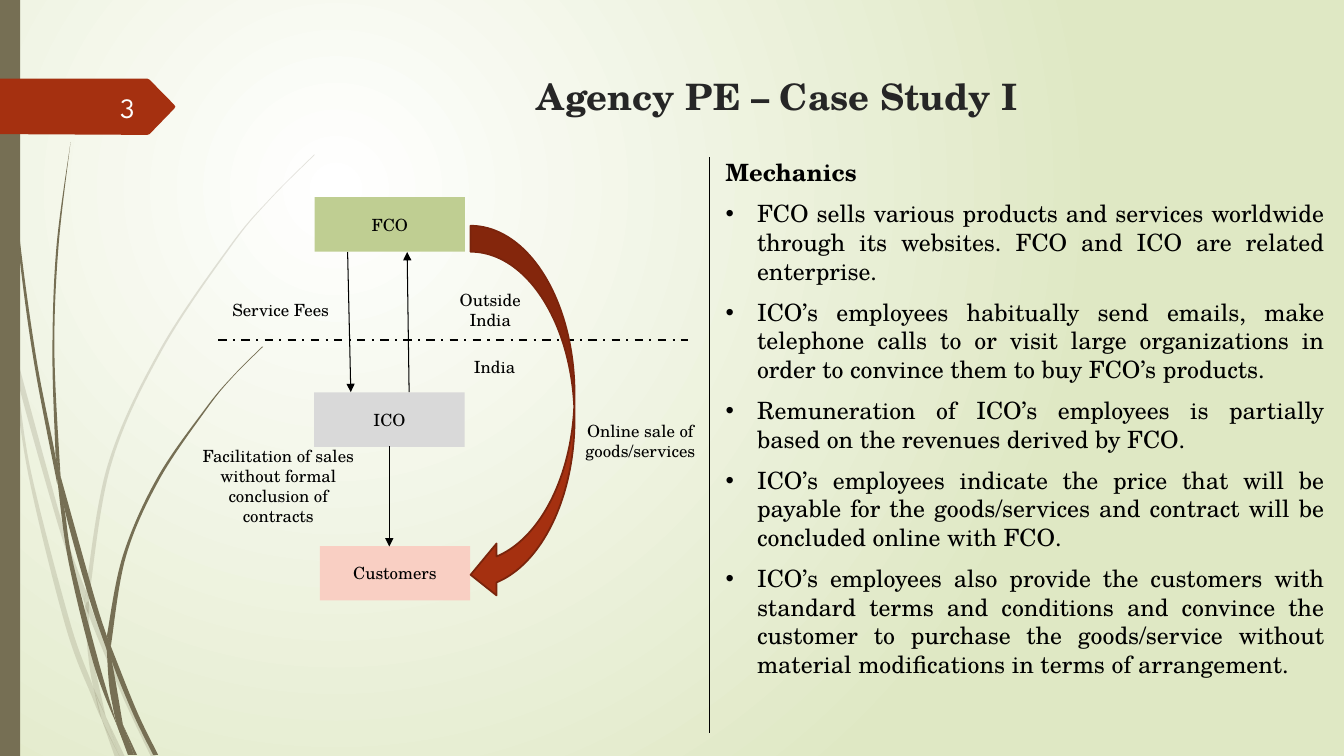
from typing import NamedTuple

from lxml.etree import SubElement
from pptx import Presentation
from pptx.dml.color import RGBColor
from pptx.enum.dml import MSO_LINE_DASH_STYLE as DASH
from pptx.enum.shapes import MSO_CONNECTOR, MSO_SHAPE as SHAPE
from pptx.enum.text import MSO_ANCHOR as ANCHOR, PP_ALIGN as ALIGN
from pptx.oxml.ns import qn
from pptx.util import Cm, Pt

SERIF, SANS = "TeX Gyre Schola", "League Spartan"
BLACK, OLIVE, RUST = "000000", "766F54", "A53010"
CM_PER_INCH = 2.54

Node = NamedTuple("Node", [("text", str), ("x", float), ("y", float), ("fill", str)])
Box = NamedTuple("Box", [("x", float), ("y", float), ("w", float), ("h", float)])


class Label(NamedTuple):
    text: str
    box: Box
    size: float = 12
    font: str = SERIF
    color: str = BLACK
    bold: bool = False
    align: ALIGN = ALIGN.CENTER
    anchor: ANCHOR = ANCHOR.MIDDLE


class Line(NamedTuple):
    start: tuple[float, float]
    end: tuple[float, float]
    arrow: bool = False
    width: float = 0.75
    dash: DASH | None = None


# Each blade of grass is its left and right edge, top to bottom, in inches.
PALE_BLADES = [
    ([(0, 2.99), (0.1, 3.44), (0.11, 3.5)], [(0, 2.82), (0.09, 3.22), (0.11, 3.5)]),
    ([(0.14, 3.45), (0.17, 3.76), (0.58, 5.22), (0.84, 5.99)],
     [(0.14, 3.45), (0.62, 5.2), (0.85, 5.86)]),
    ([(0.88, 5.96), (0.88, 6.1), (1.23, 6.94), (1.5, 7.51)],
     [(0.88, 5.96), (0.92, 6.07), (1.27, 6.92), (1.55, 7.51)]),
    ([(1.05, 7.11), (1.19, 7.51)], [(1.05, 7.11), (1.24, 7.51)]),
    ([(0.11, 3.5), (0.28, 4.7), (0.65, 6.21), (0.92, 6.93), (1.01, 7.14)],
     [(0.11, 3.5), (0.17, 3.76), (0.31, 4.69), (0.7, 6.19), (0.93, 6.83), (1.01, 7.14)]),
    ([(0.84, 5.99), (0.87, 6.46), (0.93, 6.83), (1.05, 7.11)],
     [(0.84, 5.99), (0.88, 6.1), (0.91, 6.46), (1.05, 7.11)]),
    ([(3.12, 1.53), (2.68, 1.97), (2.28, 2.44), (1.58, 3.48), (1.07, 4.61), (0.85, 5.86)],
     [(3.12, 1.54), (2.68, 1.98), (2.29, 2.45), (1.6, 3.49), (1.1, 4.62), (0.88, 5.96)]),
    ([(1.01, 7.14), (1.14, 7.51)], [(1.01, 7.14), (1.19, 7.51)]),
    ([(0.85, 5.86), (0.84, 5.99), (0.88, 6.1)], [(0.85, 5.86), (0.88, 5.96), (0.88, 6.1)]),
    ([(0.93, 6.83), (1.01, 7.14), (1.19, 7.51)], [(0.93, 6.83), (1.05, 7.11), (1.19, 7.51)]),
]
DARK_BLADES = [
    ([(0.03, 0), (0.07, 1.1), (0.17, 2.33), (0.33, 3.55), (0.57, 4.81)],
     [(0.04, 0), (0.08, 1.09), (0.19, 2.32), (0.36, 3.55), (0.55, 4.53), (0.57, 4.81)]),
    ([(0.6, 4.72), (0.64, 5.05), (0.88, 5.92), (1.06, 6.45)],
     [(0.6, 4.72), (0.93, 5.9), (1.06, 6.31)]),
    ([(1.1, 6.41), (1.11, 6.56), (1.32, 7.08), (1.52, 7.49)],
     [(1.1, 6.41), (1.36, 7.06), (1.57, 7.49)]),
    ([(0.57, 4.77), (0.68, 5.57), (0.93, 6.59), (1.17, 7.22)],
     [(0.57, 4.77), (0.64, 5.05), (0.72, 5.56), (0.98, 6.57), (1.17, 7.22)]),
    ([(0.7, 1.41), (0.56, 2.45), (0.52, 3.49), (0.55, 4.49)],
     [(0.7, 1.41), (0.58, 2.45), (0.54, 3.49), (0.6, 4.72)]),
    ([(1.22, 7.19), (1.33, 7.49)], [(1.22, 7.19), (1.36, 7.49)]),
    ([(0.55, 4.49), (0.57, 4.77), (0.64, 5.05)], [(0.55, 4.49), (0.6, 4.72), (0.64, 5.05)]),
    ([(2.6, 3.44), (2.31, 3.73), (2.04, 4.05), (1.56, 4.74), (1.22, 5.51), (1.06, 6.31)],
     [(2.61, 3.44), (2.31, 3.74), (2.05, 4.06), (1.58, 4.76), (1.25, 5.52), (1.1, 6.41)]),
    ([(1.17, 7.22), (1.27, 7.49)], [(1.17, 7.22), (1.31, 7.49)]),
    ([(1.06, 6.45), (1.1, 6.91), (1.22, 7.19)], [(1.06, 6.45), (1.11, 6.56), (1.22, 7.19)]),
    ([(1.06, 6.31), (1.06, 6.45), (1.11, 6.56)], [(1.06, 6.31), (1.1, 6.41), (1.11, 6.56)]),
    ([(1.1, 6.91), (1.17, 7.22), (1.3, 7.49)], [(1.1, 6.91), (1.22, 7.19), (1.33, 7.49)]),
]
NUMBER_TAG = [(0, 1.98), (3.71, 1.98), (3.77, 2.01), (4.39, 2.64), (4.42, 2.69),
              (4.39, 2.74), (3.77, 3.38), (3.71, 3.4), (0, 3.38)]
NODES = [Node("FCO", 7.93, 4.97, "BFCE92"), Node("ICO", 7.92, 9.89, "D9D9D9"),
         Node("Customers", 8.06, 13.76, "F9CFC3")]
LINES = [
    Line((9.81, 11.25), (9.81, 13.77), arrow=True),
    Line((8.76, 6.35), (8.84, 9.88), arrow=True),
    Line((17.88, 3.96), (17.88, 18.47)),
    Line((5.5, 8.57), (17.34, 8.57), width=1.5, dash=DASH.DASH_DOT),
    Line((10.31, 9.88), (10.26, 6.35), arrow=True),
]
LABELS = [
    Label("Agency PE – Case Study I", Box(7.21, 1.75, 24.77, 3.56), 26,
          color="262626", bold=True, anchor=ANCHOR.TOP),
    Label("India", Box(11.27, 8.71, 2.39, 1.07)),
    Label("Service Fees", Box(5.54, 7.26, 3.07, 1.07)),
    Label("Outside India", Box(11.16, 7.25, 2.39, 1.12)),
    Label("Online sale of goods/services", Box(14.4, 10.57, 3.48, 1.07)),
    Label("Facilitation of sales without formal conclusion of contracts",
          Box(4.68, 11.28, 4.67, 1.93)),
    Label("3", Box(1.48, 2.2, 2.16, 1.02), 20, SANS, "FEFFFF", align=ALIGN.RIGHT),
]
MECHANICS = [
    "FCO sells various products and services worldwide through its websites. "
    "FCO and ICO are related enterprise.",
    "ICO’s employees habitually send emails, make telephone calls to or visit large "
    "organizations in order to convince them to buy FCO’s products.",
    "Remuneration of ICO’s employees is partially based on the revenues derived by FCO.",
    "ICO’s employees indicate the price that will be payable for the goods/services and "
    "contract will be concluded online with FCO.",
    "ICO’s employees also provide the customers with standard terms and conditions and convince "
    "the customer to purchase the goods/service without material modifications in terms of "
    "arrangement.",
]


def rgb(color: str) -> RGBColor:
    return RGBColor.from_string(color)


def paint_background(s) -> None:
    fill = s.background.fill
    fill.gradient()
    for stop, position, color in zip(fill.gradient_stops, (0, 1), ("FFFFFF", "DFE8C4")):
        stop.position, stop.color.rgb = position, rgb(color)
    grad = s.element.find(".//" + qn("a:gradFill"))
    grad.remove(grad.find(qn("a:lin")))
    circle = SubElement(grad, qn("a:path"), path="circle")
    SubElement(circle, qn("a:fillToRect"), l="50000", t="50000", r="100000", b="100000")


def style(sp, fill: str) -> None:
    sp.shadow.inherit = False
    sp.fill.solid()
    sp.fill.fore_color.rgb = rgb(fill)
    sp.line.fill.background()


def add_preset(s, kind: SHAPE, box: Box, fill: str):
    sp = s.shapes.add_shape(kind, *map(Cm, box))
    style(sp, fill)
    return sp


def add_outline(s, points: list[tuple], fill: str):
    start, *rest = [(Cm(x), Cm(y)) for x, y in points]
    builder = s.shapes.build_freeform(*start)
    builder.add_line_segments(rest, close=True)
    sp = builder.convert_to_shape()
    style(sp, fill)
    return sp


def bezier(edge: list[tuple]) -> list[tuple]:
    """Anchors and control points of a smooth curve through the edge."""
    points = [edge[0]]
    for a, b, c, d in zip([edge[0], *edge], edge, edge[1:], [*edge[2:], edge[-1]]):
        points += [tuple(q + (r - p) / 6 for p, q, r in zip(a, b, c)),
                   tuple(q - (r - p) / 6 for p, q, r in zip(b, c, d)), c]
    return points


def add_blade(s, left: list[tuple], right: list[tuple], alpha: int) -> None:
    back = bezier(right)[::-1]
    points = bezier(left) + [left[-1], back[0]] + back
    sp = add_outline(s, [(x * CM_PER_INCH, y * CM_PER_INCH) for x, y in points], OLIVE)
    outline = sp.element.find(".//" + qn("a:path"))
    segments = outline.findall(qn("a:lnTo"))
    for trio in zip(*[iter(segments)] * 3):
        curve = outline.makeelement(qn("a:cubicBezTo"))
        trio[0].addprevious(curve)
        for segment in trio:
            curve.append(segment[0])
            outline.remove(segment)
    if alpha < 100:
        color = sp.element.find(".//" + qn("a:srgbClr"))
        SubElement(color, qn("a:alpha"), val=str(alpha * 1000))


def write(p, text: str, size: float, align: ALIGN, font: str = SERIF,
          color: str = BLACK, bold: bool = False) -> None:
    p.text, p.alignment = text, align
    p.font.name, p.font.size, p.font.bold = font, Pt(size), bold
    p.font.color.rgb = rgb(color)


def add_label(s, label: Label) -> None:
    tf = s.shapes.add_textbox(*map(Cm, label.box)).text_frame
    tf.word_wrap, tf.vertical_anchor = True, label.anchor
    write(tf.paragraphs[0], label.text, label.size, label.align,
          label.font, label.color, label.bold)


def add_line(s, line: Line) -> None:
    c = s.shapes.add_connector(MSO_CONNECTOR.STRAIGHT, *map(Cm, line.start + line.end))
    c.line.color.rgb, c.line.width, c.line.dash_style = rgb(BLACK), Pt(line.width), line.dash
    if line.arrow:
        SubElement(c.element.spPr.find(qn("a:ln")), qn("a:tailEnd"), type="triangle")
    SubElement(c.element.spPr, qn("a:effectLst"))


def add_mechanics(s, box: Box) -> None:
    tf = s.shapes.add_textbox(*map(Cm, box)).text_frame
    tf.word_wrap = True
    tf.margin_left = tf.margin_right = tf.margin_top = tf.margin_bottom = 0
    write(tf.paragraphs[0], "Mechanics", 17, ALIGN.LEFT, bold=True)
    for text in MECHANICS:
        p = tf.add_paragraph()
        write(p, text, 17, ALIGN.JUSTIFY)
        pPr = p._p.get_or_add_pPr()
        pPr.set("marL", str(Cm(0.79)))
        pPr.set("indent", str(-Cm(0.79)))
        for tag, key, value in (("a:buFont", "typeface", "Arial"), ("a:buChar", "char", "•")):
            pPr.find(qn("a:defRPr")).addprevious(pPr.makeelement(qn(tag), {key: value}))
    for p in tf.paragraphs:
        p.space_after = Pt(9)


def main() -> None:
    prs = Presentation()
    prs.slide_width, prs.slide_height = Cm(33.87), Cm(19.05)
    s = prs.slides.add_slide(prs.slide_layouts[6])
    paint_background(s)
    for blades, alpha in ((PALE_BLADES, 20), (DARK_BLADES, 100)):
        for left, right in blades:
            add_blade(s, left, right, alpha)
    add_preset(s, SHAPE.RECTANGLE, Box(0, 0, 0.51, 19.05), OLIVE)
    add_outline(s, NUMBER_TAG, RUST)
    for node in NODES:
        sp = add_preset(s, SHAPE.RECTANGLE, Box(node.x, node.y, 3.79, 1.37), node.fill)
        sp.text_frame.vertical_anchor = ANCHOR.MIDDLE
        write(sp.text_frame.paragraphs[0], node.text, 12, ALIGN.CENTER)
    for line in LINES:
        add_line(s, line)
    sale = add_preset(s, SHAPE.CURVED_LEFT_ARROW, Box(11.86, 5.69, 2.62, 9.45), RUST)
    sale.line.color.rgb, sale.line.width = rgb("7A240C"), Pt(1.25)
    for label in LABELS:
        add_label(s, label)
    add_mechanics(s, Box(18.29, 3.98, 15.09, 14))
    prs.save("out.pptx")


if __name__ == "__main__":
    main()
